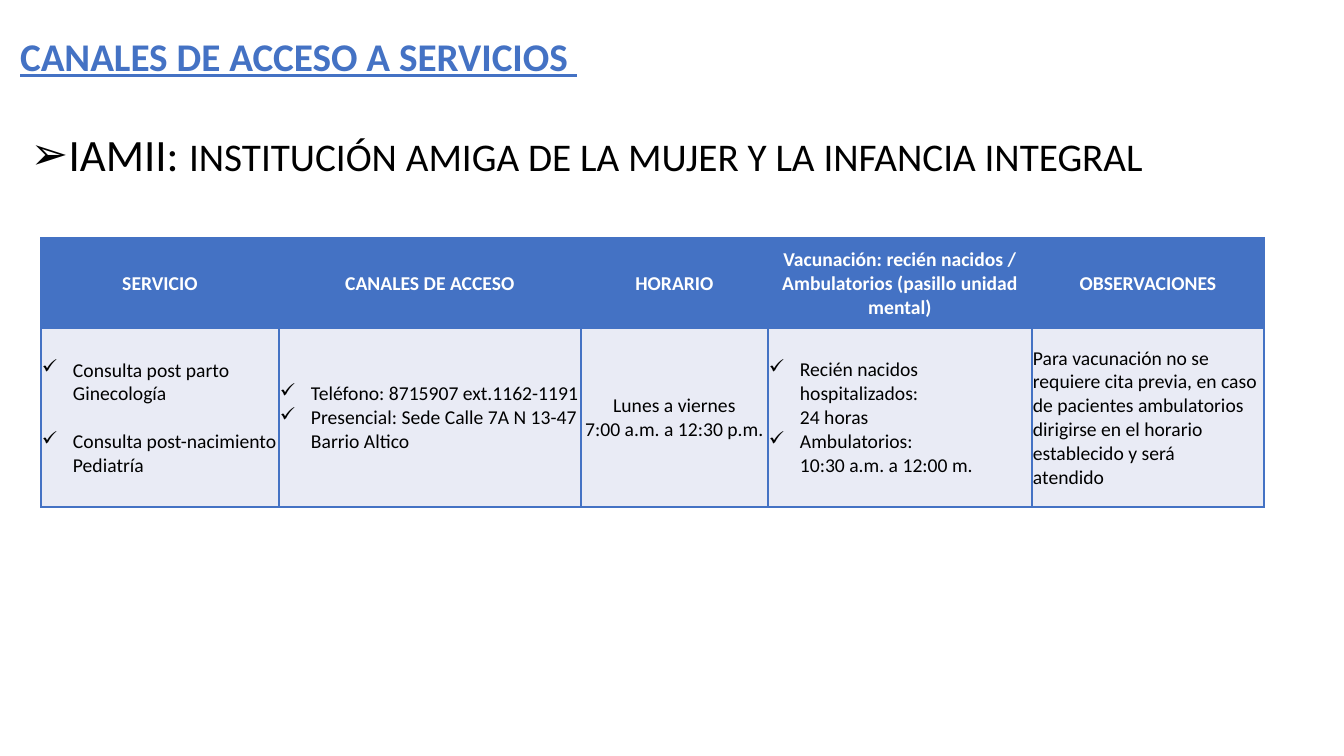
"""Build the slide on access channels for the IAMII services."""
from dataclasses import dataclass

from lxml.etree import SubElement
from pptx import Presentation
from pptx.dml.color import RGBColor
from pptx.enum.text import MSO_ANCHOR, MSO_AUTO_SIZE, PP_ALIGN
from pptx.oxml.ns import qn
from pptx.util import Pt

PX = 914400 / 100.8


@dataclass(frozen=True)
class Theme:
    font: str = "Calibri"
    blue: str = "4472C4"
    pale: str = "E9EBF5"
    white: str = "FFFFFF"
    black: str = "000000"
    title: int = 28
    acronym: int = 32
    meaning: int = 28
    cell: int = 14


THEME = Theme()
TITLE = "CANALES DE ACCESO A SERVICIOS "
ACRONYM = "IAMII: "
MEANING = "INSTITUCIÓN AMIGA DE LA MUJER Y LA INFANCIA INTEGRAL"
HEADERS = [
    "SERVICIO",
    "CANALES DE ACCESO",
    "HORARIO",
    "Vacunación: recién nacidos / Ambulatorios (pasillo unidad mental)",
    "OBSERVACIONES",
]
BULLET, INDENT, CENTER, PLAIN = "bullet", "indent", "center", "plain"
DETAILS = [
    [(BULLET, "Consulta post parto Ginecología", 0),
     (BULLET, "Consulta post-nacimiento Pediatría", 17)],
    [(BULLET, "Teléfono: 8715907 ext.1162-1191", 0),
     (BULLET, "Presencial: Sede Calle 7A N 13-47", 0),
     (INDENT, "Barrio Altico", 0)],
    [(CENTER, "Lunes a viernes", 0),
     (CENTER, "7:00 a.m. a 12:30 p.m.", 0)],
    [(BULLET, "Recién nacidos hospitalizados:\n24 horas", 0),
     (BULLET, "Ambulatorios:", 0),
     (INDENT, "10:30 a.m. a 12:00 m.", 0)],
    [(PLAIN, "Para vacunación no se requiere cita previa, en caso de pacientes "
             "ambulatorios dirigirse en el horario establecido y será\natendido", 0)],
]
COLUMN_WIDTHS = [238, 302, 187, 264, 232]
ROW_HEIGHTS = [90, 179]
CELL_INDENT = 31
HEADING_INDENT = 38


def px(length):
    return round(length * PX)


def place(box, left, top, width, height):
    box.left, box.top, box.width, box.height = map(px, (left, top, width, height))


def add_run(paragraph, text, size, color, bold=False, underline=False):
    run = paragraph.add_run()
    run.text = text
    run.font.name = THEME.font
    run.font.size = Pt(size)
    run.font.bold = bold
    run.font.underline = underline
    run.font.color.rgb = RGBColor.from_string(color)


def set_indent(paragraph, indent, mark=None):
    properties = paragraph._p.get_or_add_pPr()
    properties.set("marL", str(px(indent)))
    properties.set("indent", str(px(-indent) if mark else 0))
    if mark:
        SubElement(properties, qn("a:buChar")).set("char", mark)


def style_cell(cell, fill):
    cell.vertical_anchor = MSO_ANCHOR.MIDDLE
    cell.margin_left = cell.margin_right = cell.margin_top = px(1)
    cell.margin_bottom = 0
    properties = cell._tc.get_or_add_tcPr()
    for side in ("a:lnL", "a:lnR", "a:lnT", "a:lnB"):
        border = SubElement(properties, qn(side), w=str(Pt(1)))
        paint = SubElement(border, qn("a:solidFill"))
        SubElement(paint, qn("a:srgbClr"), val=THEME.blue)
    cell.fill.solid()
    cell.fill.fore_color.rgb = RGBColor.from_string(fill)


def write_cell(cell, entries, color, bold=False):
    frame = cell.text_frame
    for number, (kind, text, gap) in enumerate(entries):
        paragraph = frame.add_paragraph() if number else frame.paragraphs[0]
        if gap:
            paragraph.space_before = Pt(gap)
        paragraph.alignment = PP_ALIGN.CENTER if kind == CENTER else PP_ALIGN.LEFT
        if kind in (BULLET, INDENT):
            set_indent(paragraph, CELL_INDENT, "✓" if kind == BULLET else None)
        for line_number, line in enumerate(text.split("\n")):
            if line_number:
                paragraph.add_line_break()
            add_run(paragraph, line, THEME.cell, color, bold)


def add_title(slide):
    title = slide.shapes.title
    place(title, 10, 21, 922, 64)
    title.text_frame.vertical_anchor = MSO_ANCHOR.BOTTOM
    title.text_frame.auto_size = MSO_AUTO_SIZE.NONE
    paragraph = title.text_frame.paragraphs[0]
    paragraph.alignment = PP_ALIGN.LEFT
    paragraph.line_spacing = 0.9
    add_run(paragraph, TITLE, THEME.title, THEME.blue, bold=True, underline=True)


def add_heading(slide):
    heading = slide.placeholders[1]
    place(heading, 0, 122, 1173, 126)
    heading.text_frame.vertical_anchor = MSO_ANCHOR.TOP
    heading.text_frame.auto_size = MSO_AUTO_SIZE.NONE
    paragraph = heading.text_frame.paragraphs[0]
    paragraph.alignment = PP_ALIGN.CENTER
    paragraph.space_before = Pt(0)
    set_indent(paragraph, HEADING_INDENT, "➢")
    add_run(paragraph, ACRONYM, THEME.acronym, THEME.black)
    add_run(paragraph, MEANING, THEME.meaning, THEME.black)


def add_services(slide):
    services = slide.shapes.add_table(
        len(ROW_HEIGHTS), len(COLUMN_WIDTHS), px(41), px(238),
        px(sum(COLUMN_WIDTHS)), px(sum(ROW_HEIGHTS))).table
    for row, height in zip(services.rows, ROW_HEIGHTS):
        row.height = px(height)
    for index, width in enumerate(COLUMN_WIDTHS):
        services.columns[index].width = px(width)
        header, detail = services.cell(0, index), services.cell(1, index)
        style_cell(header, THEME.blue)
        write_cell(header, [(CENTER, HEADERS[index], 0)], THEME.white, bold=True)
        style_cell(detail, THEME.pale)
        write_cell(detail, DETAILS[index], THEME.black)


def main():
    deck = Presentation()
    deck.slide_width, deck.slide_height = px(1344), px(756)
    slide = deck.slides.add_slide(deck.slide_layouts[0])
    add_title(slide)
    add_heading(slide)
    add_services(slide)
    deck.save("out.pptx")


if __name__ == "__main__":
    main()
